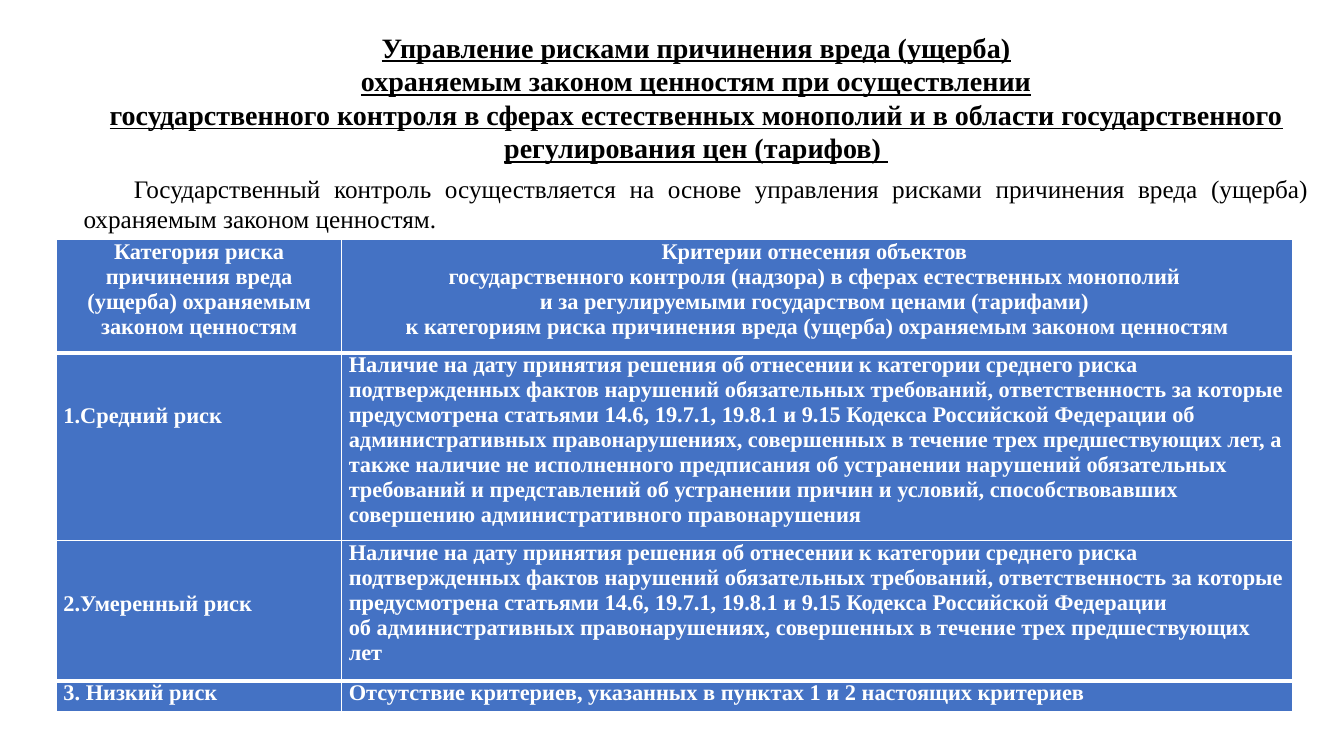
from copy import deepcopy

from lxml import etree
from pptx import Presentation, util as u
from pptx.dml.color import RGBColor
from pptx.enum import text as t
from pptx.oxml.ns import qn

BLACK = RGBColor(0, 0, 0)
WHITE = RGBColor(255, 255, 255)
BLUE = RGBColor(0x44, 0x72, 0xC4)
FONT = "Times New Roman"
LEFT, CENTER, JUSTIFY = t.PP_ALIGN.LEFT, t.PP_ALIGN.CENTER, t.PP_ALIGN.JUSTIFY

HEADING = [
    "Управление рисками причинения вреда (ущерба)",
    "охраняемым законом ценностям при осуществлении",
    "государственного контроля в сферах естественных монополий и в области "
    "государственного регулирования цен (тарифов) ",
]
INTRO = ("Государственный контроль осуществляется на основе управления рисками "
         "причинения вреда (ущерба) охраняемым законом ценностям.")
VIOLATIONS = (
    "Наличие на дату принятия решения об отнесении к категории среднего риска "
    "подтвержденных фактов нарушений обязательных требований, ответственность за "
    "которые предусмотрена статьями 14.6, 19.7.1, 19.8.1 и 9.15 Кодекса Российской Федерации ")
OFFENCES = ("об административных правонарушениях, "
            "совершенных в течение трех предшествующих лет")
RISKS = [
    (["Категория риска причинения вреда (ущерба) охраняемым законом ценностям"],
     ["Критерии отнесения объектов ",
      "государственного контроля (надзора) в сферах естественных монополий \n"
      "и за регулируемыми государством ценами (тарифами) \n"
      "к категориям риска причинения вреда (ущерба) охраняемым законом ценностям"]),
    (["1.Средний риск"],
     [VIOLATIONS + OFFENCES + ", а также наличие не исполненного предписания об "
      "устранении нарушений обязательных требований и представлений об устранении причин "
      "и условий, способствовавших совершению административного правонарушения"]),
    (["2.Умеренный риск"], [VIOLATIONS + "\n" + OFFENCES]),
    (["3. Низкий риск"],
     ["Отсутствие критериев, указанных в пунктах 1 и 2 настоящих критериев"]),
]
COLUMNS = [2.83, 9.43]
ROWS = [1.12, 1.86, 1.39, 0.3]
LABEL_DROP = [0, 0.5, 0.5, 0]
THIN, THICK = 1, 3


def write(paragraph, words, size, color, bold=True, underline=False, align=LEFT,
          before=0, indent=0):
    """Fill a paragraph; a newline in the words is a line break of the same format."""
    paragraph.alignment = align
    paragraph.space_before = u.Pt(before)
    if indent:
        paragraph._p.get_or_add_pPr().set("indent", str(u.Inches(indent)))
    for number, line in enumerate(words.split("\n")):
        if number:
            paragraph.add_line_break()
            paragraph._p[-1].append(deepcopy(run._r.rPr))
        run = paragraph.add_run()
        run.text = line
        font = run.font
        font.name, font.size, font.bold, font.underline = FONT, u.Pt(size), bold, underline
        font.color.rgb = color


def next_paragraph(frame, number):
    return frame.add_paragraph() if number else frame.paragraphs[0]


def heading_and_intro(slide, left, top, width, height):
    frame = slide.shapes.add_textbox(*map(u.Inches, (left, top, width, height))).text_frame
    frame.word_wrap = True
    for number, line in enumerate(HEADING):
        write(next_paragraph(frame, number), line, 20, BLACK, underline=True, align=CENTER)
    write(frame.add_paragraph(), INTRO, 18, BLACK, bold=False, align=JUSTIFY,
          before=6, indent=0.5)


def set_borders(cell, top, bottom):
    """Draw white borders; top and bottom are widths in points."""
    properties = cell._tc.get_or_add_tcPr()
    sides = {"lnL": THIN, "lnR": THIN, "lnT": top, "lnB": bottom}
    for place, (side, width) in enumerate(sides.items()):
        line = etree.Element(qn("a:" + side), w=str(u.Pt(width)))
        fill = etree.SubElement(line, qn("a:solidFill"))
        etree.SubElement(fill, qn("a:srgbClr"), val=str(WHITE))
        properties.insert(place, line)


def risk_table(slide, left, top):
    box = map(u.Inches, (left, top, sum(COLUMNS), sum(ROWS)))
    table = slide.shapes.add_table(len(ROWS), len(COLUMNS), *box).table
    table.horz_banding = False
    for column, width in zip(table.columns, COLUMNS):
        column.width = u.Inches(width)
    last = len(ROWS) - 1
    for r, contents in enumerate(RISKS):
        table.rows[r].height = u.Inches(ROWS[r])
        for c, paragraphs in enumerate(contents):
            cell = table.cell(r, c)
            cell.margin_left = cell.margin_right = u.Inches(0.07)
            cell.margin_top = u.Inches(0 if c else LABEL_DROP[r])
            cell.margin_bottom = 0
            cell.fill.solid()
            cell.fill.fore_color.rgb = BLUE
            set_borders(cell, top=THICK if r in (1, last) else THIN,
                        bottom=THICK if r in (0, last - 1) else THIN)
            for number, words in enumerate(paragraphs):
                write(next_paragraph(cell.text_frame, number), words, 16, WHITE,
                      align=LEFT if r else CENTER)


def main():
    deck = Presentation()
    deck.slide_width, deck.slide_height = u.Inches(13.33), u.Inches(7.5)
    slide = deck.slides.add_slide(deck.slide_layouts[6])
    heading_and_intro(slide, 0.73, 0.25, 12.35, 2.14)
    risk_table(slide, 0.56, 2.38)
    deck.save("out.pptx")


if __name__ == "__main__":
    main()
